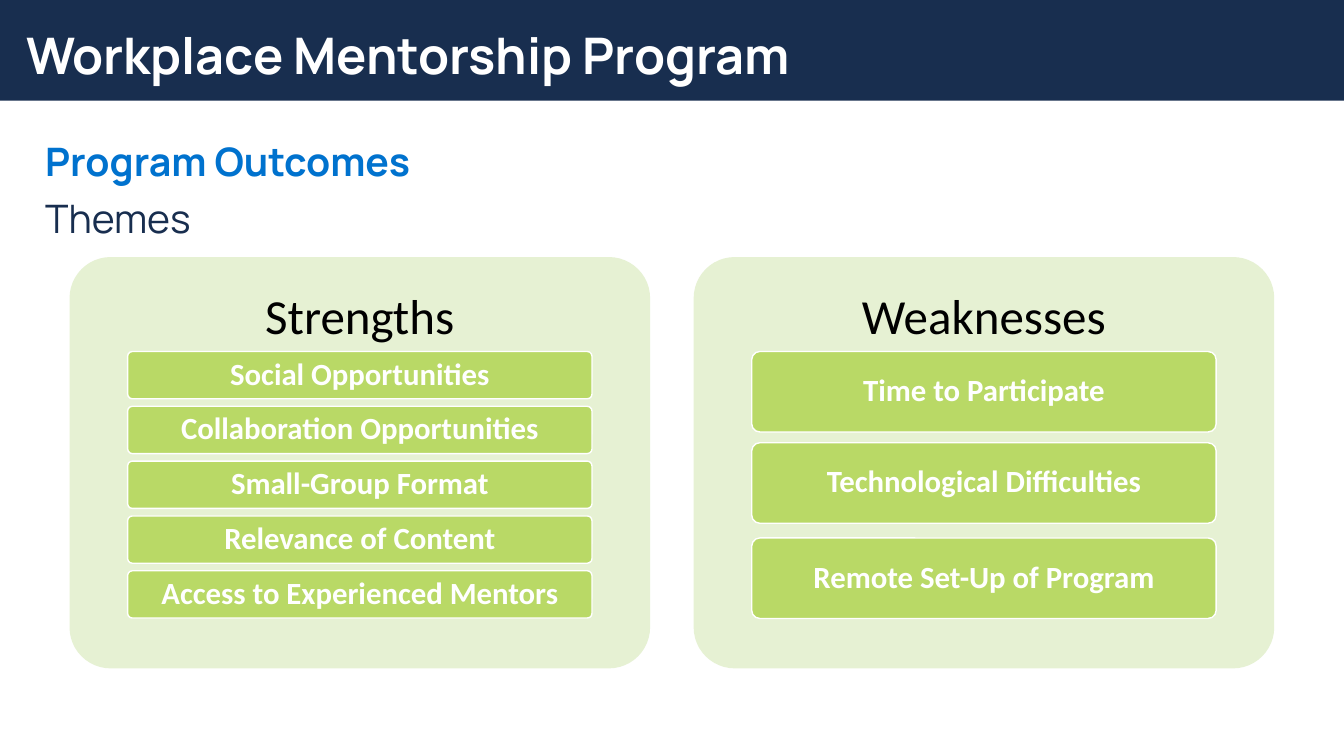
from dataclasses import dataclass

from pptx import Presentation
from pptx.dml.color import RGBColor
from pptx.enum.shapes import MSO_SHAPE
from pptx.enum.text import MSO_ANCHOR, PP_ALIGN
from pptx.util import Pt


@dataclass(frozen=True)
class Theme:
    navy: str = "182E4F"
    blue: str = "0072CE"
    white: str = "FFFFFF"
    black: str = "000000"
    panel: str = "E6F1D3"
    card: str = "B9D966"
    brand_font: str = "Manrope"
    body_font: str = "Calibri"
    title_size: float = 36
    subtitle_size: float = 28
    heading_size: float = 35
    card_size: float = 22


def write(para, text, *, size, color, font, bold=False, align=PP_ALIGN.LEFT, before=0):
    para.alignment = align
    para.line_spacing = 0.9
    para.space_before = Pt(before)
    span = para.add_run()
    span.text = text
    span.font.size = Pt(size)
    span.font.name = font
    span.font.bold = bold
    span.font.color.rgb = RGBColor.from_string(color)


def prepare_frame(shape, anchor, margin_x=7.2, margin_y=3.6):
    """Set wrapping, anchor and margins, and return the text frame."""
    frame = shape.text_frame
    frame.word_wrap = True
    frame.vertical_anchor = anchor
    frame.margin_left = frame.margin_right = Pt(margin_x)
    frame.margin_top = frame.margin_bottom = Pt(margin_y)
    return frame


class SlideBuilder:
    def __init__(self, slide, theme):
        self.slide = slide
        self.theme = theme

    def shape(self, kind, left, top, width, height, fill, line=None):
        box = self.slide.shapes.add_shape(kind, Pt(left), Pt(top), Pt(width), Pt(height))
        box.shadow.inherit = False
        box.fill.solid()
        box.fill.fore_color.rgb = RGBColor.from_string(fill)
        if line:
            box.line.color.rgb = RGBColor.from_string(line)
            box.line.width = Pt(1)
        else:
            box.line.fill.background()
        if kind == MSO_SHAPE.ROUNDED_RECTANGLE:
            box.adjustments[0] = 0.1
        return box

    def text_box(self, left, top, width, height, anchor=MSO_ANCHOR.TOP, **margins):
        box = self.slide.shapes.add_textbox(Pt(left), Pt(top), Pt(width), Pt(height))
        return prepare_frame(box, anchor, **margins)

    def title(self, text):
        theme = self.theme
        title = self.slide.shapes.title
        title.left, title.top, title.width, title.height = Pt(11.5), Pt(10.8), Pt(828), Pt(61.2)
        band = self.shape(MSO_SHAPE.RECTANGLE, 0, 0, 960, 72, theme.navy)
        title.element.addprevious(band.element)
        frame = prepare_frame(title, MSO_ANCHOR.MIDDLE)
        write(frame.paragraphs[0], text, size=theme.title_size, color=theme.white,
              font=theme.brand_font, bold=True)

    def subtitle(self, heading, subheading):
        theme = self.theme
        frame = self.text_box(25.2, 98.6, 546.5, 102.2)
        write(frame.paragraphs[0], heading, size=theme.subtitle_size, color=theme.blue,
              font=theme.brand_font, bold=True)
        write(frame.add_paragraph(), subheading, size=theme.subtitle_size, color=theme.navy,
              font=theme.brand_font, before=10)

    def card(self, text, left, top, width, height):
        theme = self.theme
        box = self.shape(MSO_SHAPE.ROUNDED_RECTANGLE, left, top, width, height,
                         theme.card, theme.white)
        frame = prepare_frame(box, MSO_ANCHOR.MIDDLE, margin_x=4.3)
        write(frame.paragraphs[0], text, size=theme.card_size, color=theme.white,
              font=theme.body_font, bold=True, align=PP_ALIGN.CENTER)

    def panel(self, heading, left, card_height, cards):
        """Draw a panel; cards pairs each text with its top."""
        theme = self.theme
        top, width, inset = 183.6, 414.7, 41.5
        self.shape(MSO_SHAPE.ROUNDED_RECTANGLE, left, top, width, 293.8, theme.panel)
        frame = self.text_box(left, top, width, 87.8, MSO_ANCHOR.MIDDLE,
                              margin_x=10.8, margin_y=10.8)
        write(frame.paragraphs[0], heading, size=theme.heading_size, color=theme.black,
              font=theme.body_font, align=PP_ALIGN.CENTER)
        for text, card_top in cards:
            self.card(text, left + inset, card_top, width - 2 * inset, card_height)


def main():
    deck = Presentation()
    deck.slide_width, deck.slide_height = Pt(960), Pt(540)
    page = SlideBuilder(deck.slides.add_slide(deck.slide_layouts[5]), Theme())
    page.title("Workplace Mentorship Program")
    page.subtitle("Program Outcomes", "Themes")

    strengths = ["Social Opportunities", "Collaboration Opportunities", "Small-Group Format",
                 "Relevance of Content", "Access to Experienced Mentors"]
    first_top, pitch = 251.1, 39.15
    page.panel("Strengths", 49.7, 33.8,
               [(text, first_top + row * pitch) for row, text in enumerate(strengths)])
    page.panel("Weaknesses", 495.5, 57.5,
               [("Time to Participate", first_top),
                ("Technological Difficulties", 316.3),
                ("Remote Set-Up of Program", 384.3)])
    deck.save("out.pptx")


if __name__ == "__main__":
    main()
